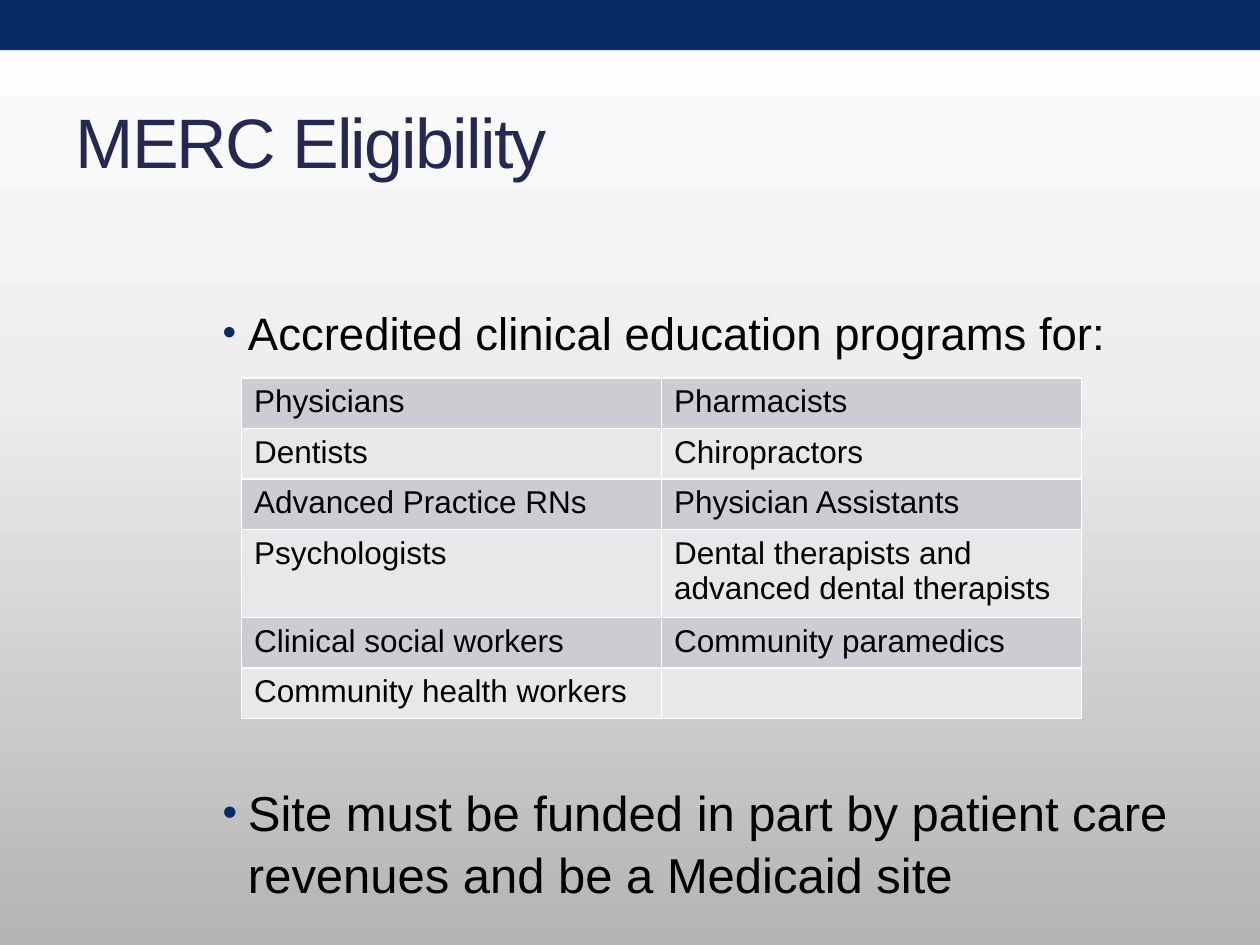
"""Build the MERC Eligibility slide."""
from copy import deepcopy

from lxml.etree import SubElement
from pptx import Presentation
from pptx.dml.color import RGBColor
from pptx.enum.shapes import MSO_SHAPE
from pptx.enum.text import MSO_ANCHOR, PP_ALIGN
from pptx.oxml.ns import qn
from pptx.util import Cm, Pt

TITLE = "MERC Eligibility"
POINTS = [
    ("Accredited clinical education programs for:", 26, 0),
    ("Site must be funded in part by patient care revenues and be a Medicaid site", 28, 240),
]
ROWS = [
    ("Physicians", "Pharmacists"),
    ("Dentists", "Chiropractors"),
    ("Advanced Practice RNs", "Physician Assistants"),
    ("Psychologists", "Dental therapists and advanced dental therapists"),
    ("Clinical social workers", "Community paramedics"),
    ("Community health workers", ""),
]
TALL = 3

FONT = "Arial"
NAVY = RGBColor(0x07, 0x2B, 0x62)
INDIGO = RGBColor(0x24, 0x28, 0x52)
BLACK = RGBColor(0, 0, 0)
WHITE = RGBColor(0xFF, 0xFF, 0xFF)
BANDS = [RGBColor(0xCC, 0xCD, 0xD3), RGBColor(0xE7, 0xE8, 0xEA)]
FADE = [(0, WHITE), (0.4, RGBColor(0xEE, 0xEE, 0xEE)), (1, RGBColor(0xB4, 0xB4, 0xB4))]


def add_text(para, text, size, color):
    run = para.add_run()
    run.text = text
    run.font.name = FONT
    run.font.size = Pt(size)
    run.font.color.rgb = color
    return run


def add_color(node, color):
    SubElement(node, qn("a:srgbClr"), val=str(color))


def set_back(slide):
    fill = slide.background.fill
    fill.gradient()
    fill.gradient_angle = 270
    first = fill.gradient_stops[0]._gs
    first.addnext(deepcopy(first))
    for stop, (pos, color) in zip(fill.gradient_stops, FADE):
        stop.position = pos
        stop.color.rgb = color


def add_band(slide, top, height, color):
    band = slide.shapes.add_shape(MSO_SHAPE.RECTANGLE, 0, top, Cm(25.4), height)
    band.shadow.inherit = False
    band.fill.solid()
    band.fill.fore_color.rgb = color
    band.line.fill.background()


def set_title(slide):
    title = slide.shapes.title
    title.left, title.top, title.width, title.height = Cm(1.27), Cm(1.47), Cm(22.86), Cm(2.74)
    title.text_frame.vertical_anchor = MSO_ANCHOR.MIDDLE
    para = title.text_frame.paragraphs[0]
    para.alignment = PP_ALIGN.LEFT
    run = add_text(para, TITLE, 40, INDIGO)
    run.font._element.set("spc", "-100")


def add_bullet(para):
    props = para._p.get_or_add_pPr()
    props.set("marL", str(Cm(0.51)))
    props.set("indent", str(-Cm(0.51)))
    add_color(SubElement(props, qn("a:buClr")), NAVY)
    SubElement(props, qn("a:buSzPct"), val="85000")
    SubElement(props, qn("a:buFont"), typeface=FONT)
    SubElement(props, qn("a:buChar"), char="•")


def add_points(slide):
    box = slide.shapes.add_textbox(Cm(4.24), Cm(6.02), Cm(21.16), Cm(13.03))
    frame = box.text_frame
    frame.word_wrap = True
    for i, (text, size, gap) in enumerate(POINTS):
        para = frame.add_paragraph() if i else frame.paragraphs[0]
        add_bullet(para)
        if gap:
            para.space_before = Pt(gap)
            para.line_spacing = 1.05
        add_text(para, text, size, BLACK)


def set_edges(cell):
    props = cell._tc.get_or_add_tcPr()
    for i, side in enumerate(("lnL", "lnR", "lnT", "lnB")):
        line = props.makeelement(qn("a:" + side), {"w": str(Pt(1))})
        add_color(SubElement(line, qn("a:solidFill")), WHITE)
        props.insert(i, line)


def add_grid(slide):
    low, high = Cm(0.97), Cm(1.67)
    total = low * (len(ROWS) - 1) + high
    frame = slide.shapes.add_table(len(ROWS), 2, Cm(4.87), Cm(7.62), Cm(16.93), total)
    grid = frame.table
    grid.first_row = False
    for r, names in enumerate(ROWS):
        grid.rows[r].height = high if r == TALL else low
        for c, name in enumerate(names):
            cell = grid.cell(r, c)
            cell.fill.solid()
            cell.fill.fore_color.rgb = BANDS[r % 2]
            set_edges(cell)
            para = cell.text_frame.paragraphs[0]
            para.font.size = Pt(18)
            if name:
                add_text(para, name, 18, BLACK)


def main():
    deck = Presentation()
    deck.slide_width, deck.slide_height = Cm(25.4), Cm(19.05)
    slide = deck.slides.add_slide(deck.slide_layouts[5])
    set_back(slide)
    add_band(slide, Cm(0.61), Cm(0.64), WHITE)
    add_band(slide, 0, Cm(1.01), NAVY)
    set_title(slide)
    add_points(slide)
    add_grid(slide)
    deck.save("out.pptx")


if __name__ == "__main__":
    main()
